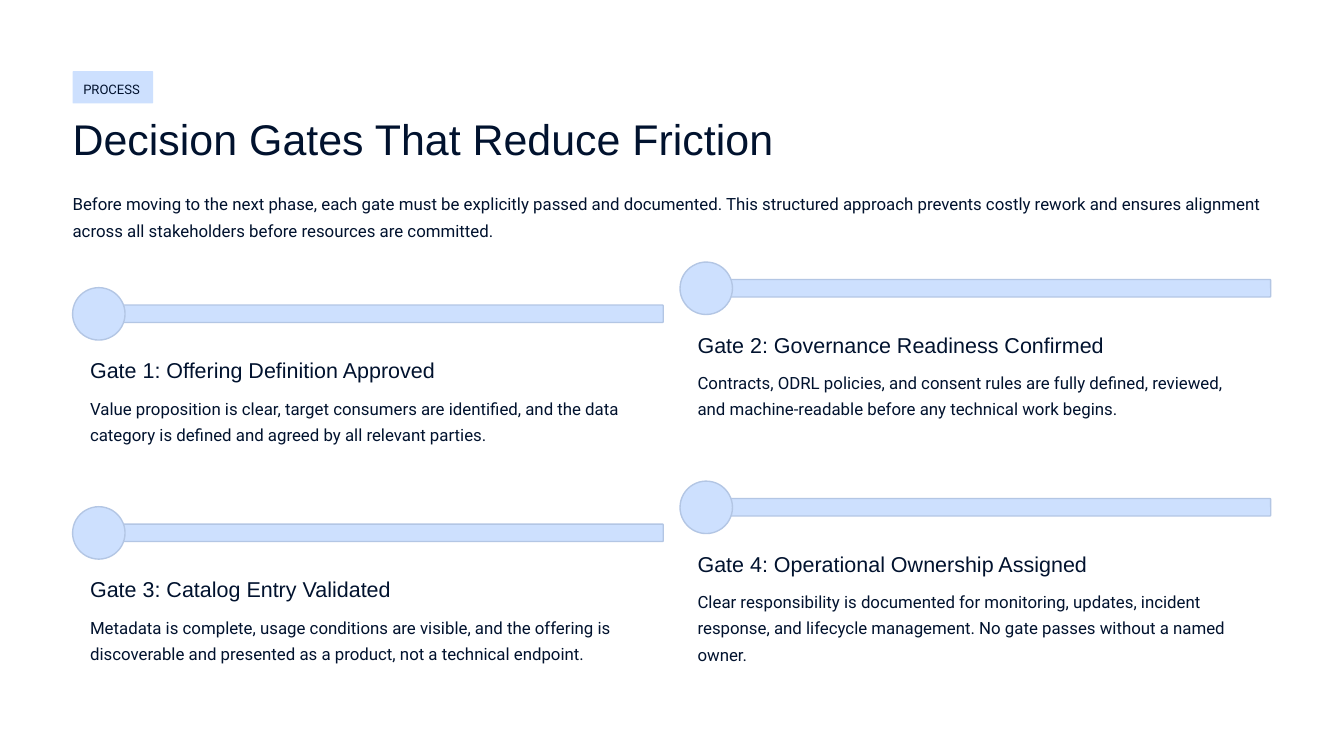
import pptx
import pptx.util
import pptx.dml.color
import pptx.enum.shapes
import pptx.enum.text

Inches = pptx.util.Inches

TAG = "PROCESS"
TITLE = "Decision Gates That Reduce Friction"
INTRO = (
    "Before moving to the next phase, each gate must be explicitly passed and documented. "
    "This structured approach prevents costly rework and ensures alignment across all "
    "stakeholders before resources are committed."
)
GATES = [
    ("Gate 1: Offering Definition Approved",
     "Value proposition is clear, target consumers are identified, and the data category "
     "is defined and agreed by all relevant parties."),
    ("Gate 2: Governance Readiness Confirmed",
     "Contracts, ODRL policies, and consent rules are fully defined, reviewed, and "
     "machine-readable before any technical work begins."),
    ("Gate 3: Catalog Entry Validated",
     "Metadata is complete, usage conditions are visible, and the offering is discoverable "
     "and presented as a product, not a technical endpoint."),
    ("Gate 4: Operational Ownership Assigned",
     "Clear responsibility is documented for monitoring, updates, incident response, and "
     "lifecycle management. No gate passes without a named owner."),
]

INK, PALE, EDGE = "01122E", "CDE0FE", "B3C6E4"
FORMATS = {
    "tag": {"name": "Roboto", "size": 7, "spacing": 1.3},
    "title": {"name": "Arial", "size": 23, "spacing": 1.04},
    "body": {"name": "Roboto", "size": 9, "spacing": 1.3},
    "heading": {"name": "Arial", "size": 11.5, "spacing": 1.04},
}
FRAME = {
    "margin_left": 0, "margin_right": 0, "margin_top": 0, "margin_bottom": 0,
    "word_wrap": True,
    "auto_size": pptx.enum.text.MSO_AUTO_SIZE.NONE,
    "vertical_anchor": pptx.enum.text.MSO_ANCHOR.TOP,
}
LEFT, WIDTH = 0.54, 8.91
COLUMNS = [(LEFT, 2.14), (5.06, 1.95)]
ROW_STEP = 1.63
DOT, BAR_H, BAR_W = 0.39, 0.13, 4.2


def color(hex_value):
    return pptx.dml.color.RGBColor.from_string(hex_value)


def write(sp, text, style):
    fmt = FORMATS[style]
    tf = sp.text_frame
    for key, value in FRAME.items():
        setattr(tf, key, value)
    p = tf.paragraphs[0]
    p.alignment = pptx.enum.text.PP_ALIGN.LEFT
    p.line_spacing = fmt["spacing"]
    r = p.add_run()
    r.text = text
    values = {"name": fmt["name"], "size": pptx.util.Pt(fmt["size"])}
    for key, value in values.items():
        setattr(r.font, key, value)
    r.font.color.rgb = color(INK)


def add_text(s, box, text, style):
    write(s.shapes.add_textbox(*map(Inches, box)), text, style)


def add_block(s, box, radius, line=None):
    kind = pptx.enum.shapes.MSO_SHAPE.ROUNDED_RECTANGLE
    sp = s.shapes.add_shape(kind, *map(Inches, box))
    sp.adjustments[0] = radius
    sp.shadow.inherit = False
    sp.fill.solid()
    sp.fill.fore_color.rgb = color(PALE)
    if line:
        sp.line.color.rgb = color(line)
        sp.line.width = pptx.util.Pt(0.75)
    else:
        sp.line.fill.background()


def add_gate(s, x, y, heading, body):
    add_block(s, (x + DOT / 2, y + (DOT - BAR_H) / 2, BAR_W, BAR_H), 0.05, EDGE)
    add_block(s, (x, y, DOT, DOT), 0.5, EDGE)
    add_text(s, (x + 0.13, y + 0.51, 4.12, 0.2), heading, "heading")
    add_text(s, (x + 0.13, y + 0.78, 4.12, 0.4), body, "body")


def main():
    prs = pptx.Presentation()
    prs.slide_width = Inches(10)
    prs.slide_height = prs.slide_width * 9 // 16
    s = prs.slides.add_slide(prs.slide_layouts[5])

    add_block(s, (LEFT, 0.53, 0.6, 0.24), 0.03)
    add_text(s, (0.62, 0.57, 0.95, 0.16), TAG, "tag")

    title = s.shapes.title
    box = {"left": LEFT, "top": 0.82, "width": WIDTH, "height": 0.4}
    for key, value in box.items():
        setattr(title, key, Inches(value))
    write(title, TITLE, "title")
    add_text(s, (LEFT, 1.4, WIDTH, 0.4), INTRO, "body")

    for i, (heading, body) in enumerate(GATES):
        row, col = divmod(i, len(COLUMNS))
        x, y = COLUMNS[col]
        add_gate(s, x, y + row * ROW_STEP, heading, body)

    prs.save("out.pptx")


if __name__ == "__main__":
    main()
